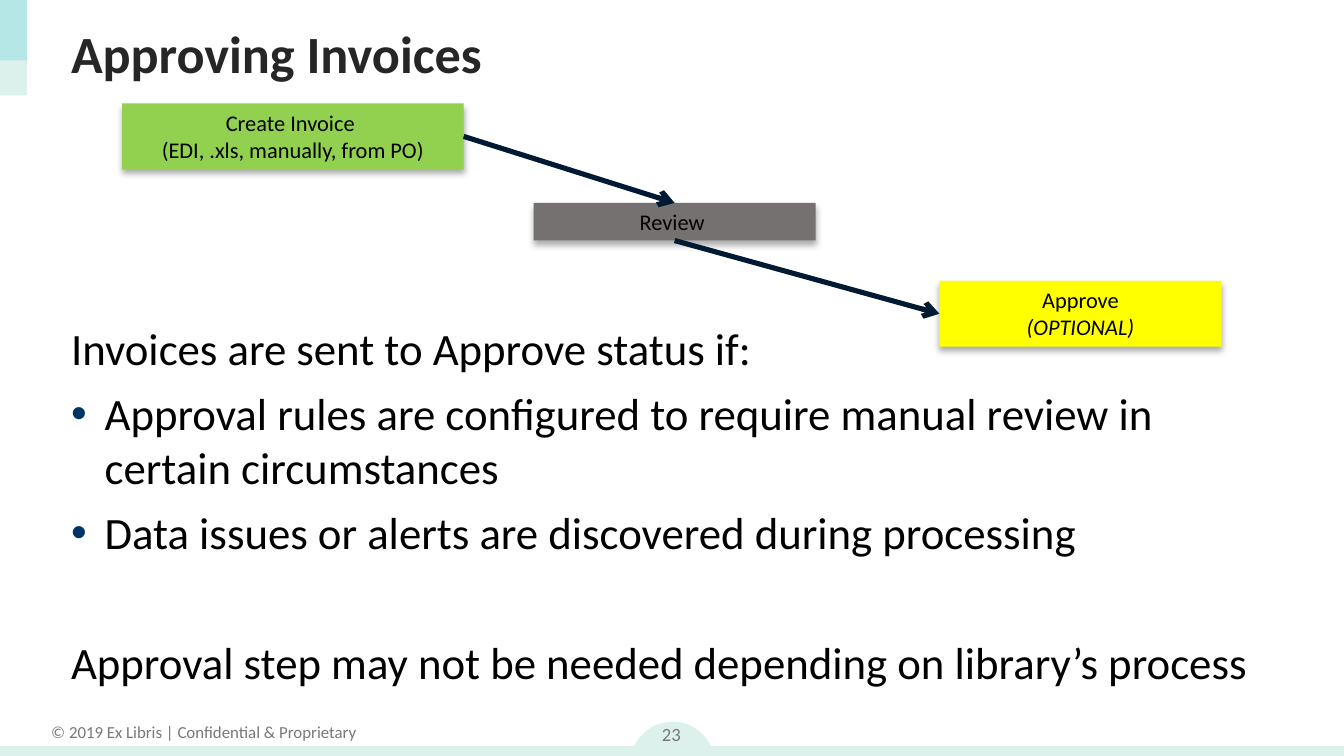
from lxml import etree
from pptx import Presentation
from pptx.dml.color import RGBColor
from pptx.enum.shapes import MSO_CONNECTOR, MSO_SHAPE
from pptx.enum.text import MSO_ANCHOR, PP_ALIGN
from pptx.oxml.ns import qn
from pptx.util import Inches, Pt

RECTANGLE, OVAL = MSO_SHAPE.RECTANGLE, MSO_SHAPE.OVAL
STRAIGHT = MSO_CONNECTOR.STRAIGHT
LEFT, CENTER = PP_ALIGN.LEFT, PP_ALIGN.CENTER
TOP, MIDDLE = MSO_ANCHOR.TOP, MSO_ANCHOR.MIDDLE
SITE_TOP, SITE_LEFT, SITE_BOTTOM, SITE_RIGHT = range(4)

BLACK = RGBColor(0x00, 0x00, 0x00)
CHARCOAL = RGBColor(0x26, 0x26, 0x26)
GRAY = RGBColor(0x78, 0x78, 0x78)
MINT = RGBColor(0xDC, 0xF1, 0xEC)
TURQUOISE = RGBColor(0x50, 0xCF, 0xDA)
NAVY = RGBColor(0x00, 0x1A, 0x33)
BLUE = RGBColor(0x00, 0x34, 0x66)
GREEN = RGBColor(0x92, 0xD0, 0x50)
STONE = RGBColor(0x76, 0x71, 0x71)
YELLOW = RGBColor(0xFF, 0xFF, 0x00)


def add_element(parent, tag, **attributes):
    return etree.SubElement(parent, qn(tag), **attributes)


def add_bullet(para, color):
    properties = para._p.get_or_add_pPr()
    properties.set("marL", str(Inches(0.25)))
    properties.set("indent", str(-Inches(0.25)))
    add_element(add_element(properties, "a:buClr"), "a:srgbClr", val=str(color))
    add_element(properties, "a:buFont", typeface="Arial")
    add_element(properties, "a:buChar", char="•")


def write(frame, text, size=12, color=BLACK, bold=False, italic=False,
          align=LEFT, before=0, bullet=None, font="Calibri"):
    para = frame.paragraphs[0]
    if para.runs:
        para = frame.add_paragraph()
    if bullet:
        add_bullet(para, bullet)
    para.alignment = align
    para.space_before = Pt(before)
    span = para.add_run()
    span.text = text
    span.font.name = font
    span.font.size = Pt(size)
    span.font.color.rgb = color
    span.font.bold = bold
    span.font.italic = italic


class SlideBuilder:
    line_width = Pt(2.75)

    def __init__(self, slide):
        self.shapes = slide.shapes

    def block(self, bounds, color, kind=RECTANGLE, alpha=None):
        shape = self.shapes.add_shape(kind, *map(Inches, bounds))
        shape.shadow.inherit = False
        shape.fill.solid()
        shape.fill.fore_color.rgb = color
        shape.line.fill.background()
        if alpha:
            tint = shape._element.spPr.find(qn("a:solidFill"))[0]
            add_element(tint, "a:alpha", val=str(alpha * 1000))
        return shape

    def text_box(self, bounds, anchor=TOP, wrap=True):
        frame = self.shapes.add_textbox(*map(Inches, bounds)).text_frame
        frame.word_wrap = wrap
        frame.vertical_anchor = anchor
        return frame

    def step(self, bounds, color, *lines, note=None):
        shape = self.block(bounds, color)
        effects = shape._element.spPr.find(qn("a:effectLst"))
        shadow = add_element(effects, "a:outerShdw", blurRad=str(Pt(3.5)),
                             dist=str(Pt(2.2)), dir="5400000", rotWithShape="0")
        tint = add_element(shadow, "a:srgbClr", val=str(BLACK))
        add_element(tint, "a:alpha", val="32000")
        frame = shape.text_frame
        frame.word_wrap = True
        frame.vertical_anchor = TOP
        frame.margin_left = frame.margin_right = Inches(0.07)
        frame.margin_top = frame.margin_bottom = Inches(0.04)
        for line in lines:
            write(frame, line, align=CENTER)
        if note:
            write(frame, note, italic=True, align=CENTER)
        return shape

    def arrow(self, source, source_site, target, target_site):
        connector = self.shapes.add_connector(STRAIGHT, 0, 0, 0, 0)
        connector.begin_connect(source, source_site)
        connector.end_connect(target, target_site)
        connector.line.color.rgb = NAVY
        connector.line.width = self.line_width
        properties = connector._element.spPr
        add_element(properties.find(qn("a:ln")), "a:tailEnd", type="arrow")
        add_element(properties, "a:effectLst")


def main():
    deck = Presentation()
    deck.slide_width = Inches(10)
    deck.slide_height = deck.slide_width * 9 // 16
    page = SlideBuilder(deck.slides.add_slide(deck.slide_layouts[6]))

    page.block((4.69, 5.37, 0.63, 0.63), MINT, kind=OVAL)
    write(page.text_box((0.27, 5.32, 2.49, 0.25), wrap=False),
          "© 2019 Ex Libris | Confidential & Proprietary",
          size=9, color=GRAY, align=CENTER)
    page.block((0, 5.55, 10, 0.11), MINT)
    page.block((0, 0, 0.2, 0.71), MINT)
    page.block((0, 0, 0.2, 0.45), TURQUOISE, alpha=27)
    write(page.text_box((4.7, 5.26, 0.59, 0.4), anchor=MIDDLE), "23",
          size=10, color=GRAY, align=CENTER)

    write(page.text_box((0.43, 0.08, 9.21, 0.63), anchor=MIDDLE),
          "Approving Invoices", size=28, color=CHARCOAL, bold=True)

    body = page.text_box((0.43, 2.34, 9.21, 2.86))
    write(body, "Invoices are sent to Approve status if:", size=24)
    for reason in (
        "Approval rules are configured to require manual review in certain circumstances",
        "Data issues or alerts are discovered during processing",
    ):
        write(body, reason, size=24, before=6, bullet=BLUE)
    write(body, "Approval step may not be needed depending on library’s process",
          size=24, before=41)

    create = page.step((0.91, 0.77, 2.54, 0.49), GREEN,
                       "Create Invoice ", "(EDI, .xls, manually, from PO)")
    review = page.step((3.97, 1.51, 2.1, 0.28), STONE, "Review ")
    approve = page.step((6.99, 2.09, 2.1, 0.49), YELLOW, "Approve", note="(OPTIONAL)")
    page.arrow(create, SITE_RIGHT, review, SITE_TOP)
    page.arrow(review, SITE_BOTTOM, approve, SITE_LEFT)

    deck.save("out.pptx")


if __name__ == "__main__":
    main()
